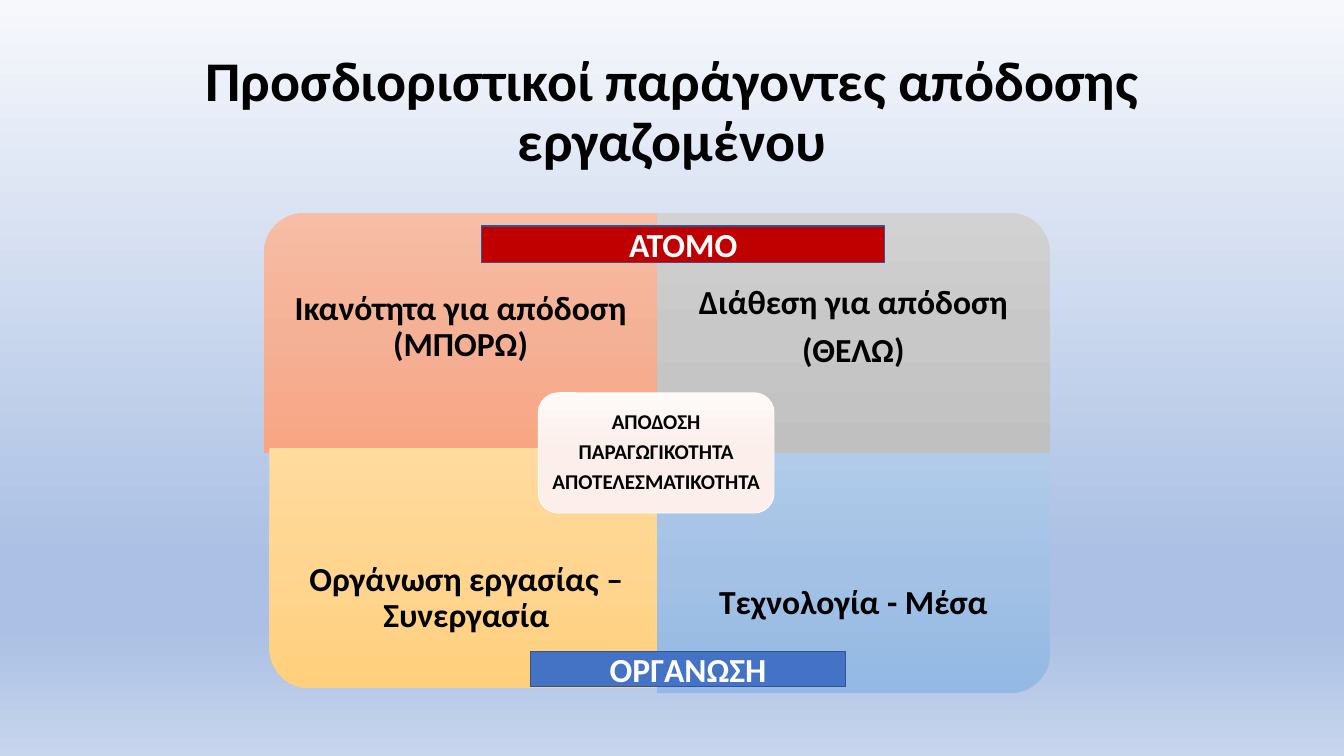
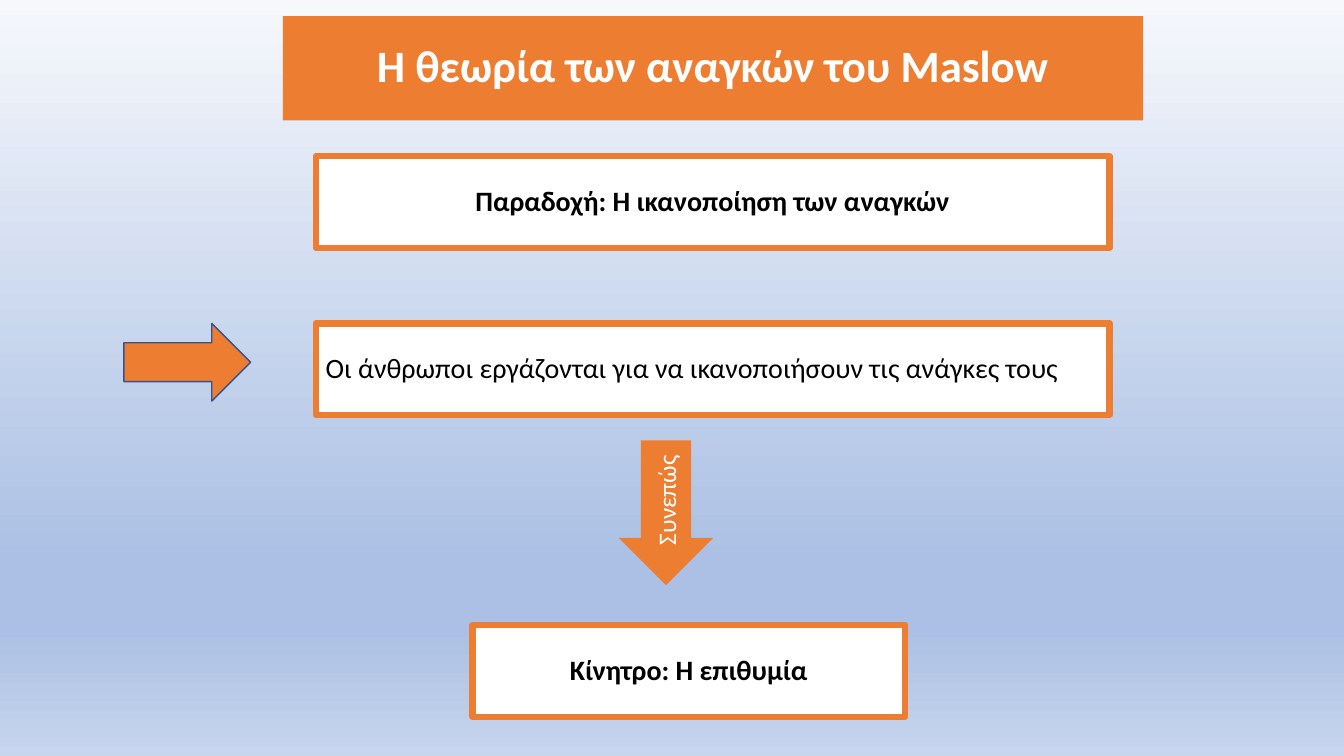
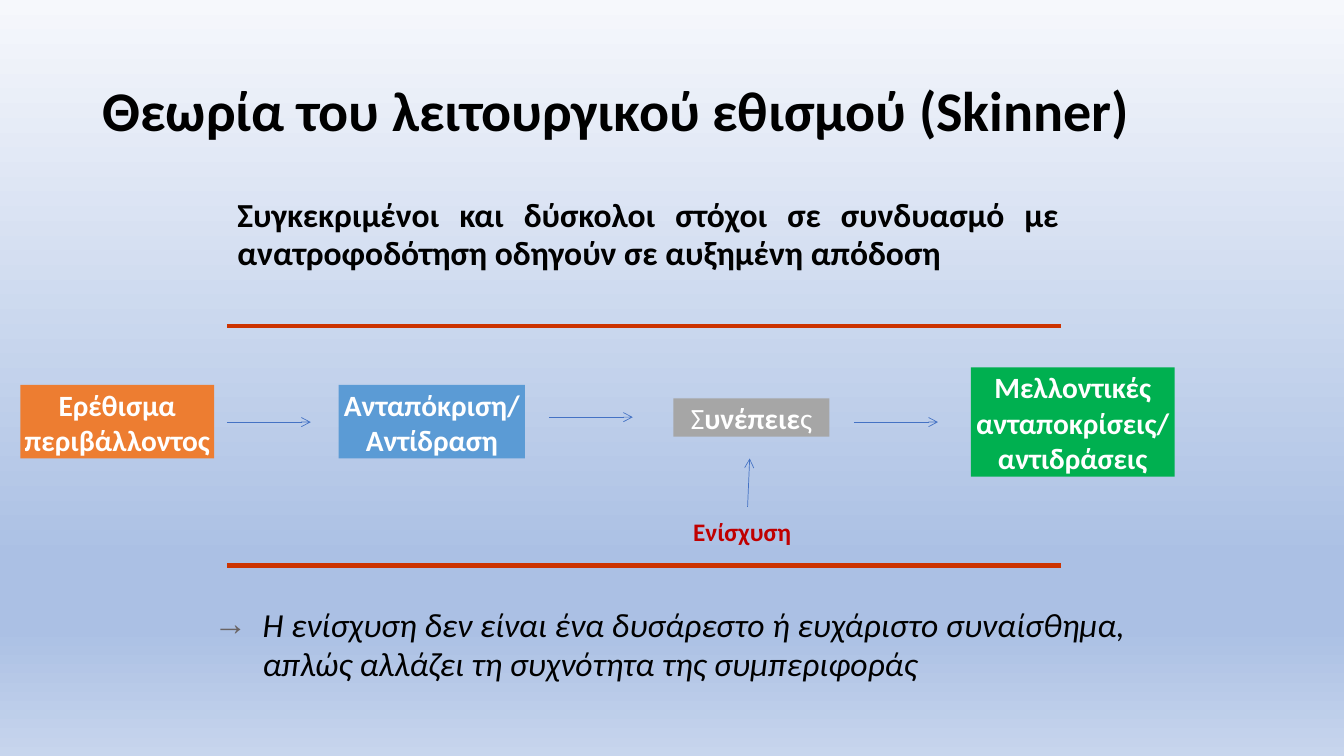
from lxml import etree
from pptx import Presentation
from pptx import util as u
from pptx.dml import color
from pptx.enum import shapes, text
from pptx.oxml import ns

COLORS = {
    "ink": "000000", "white": "FFFFFF", "orange": "ED7D31", "red": "C00000",
    "blue": "4472C4", "outline": "325491", "sky": "5B9BD5", "gray": "A6A6A6",
    "green": "00B050", "rule": "CC3300", "bullet": "696363",
}
GRADIENTS = {
    "background": [(0, "F6F8FC"), (74, "ABC0E4"), (83, "ABC0E4"), (100, "C7D5ED")],
    "ability": [(0, "F7BDA5"), (50, "F5B196"), (100, "F8A582")],
    "will": [(0, "D2D2D2"), (50, "C8C8C8"), (100, "C0C0C0")],
    "organisation": [(0, "FFDB9E"), (50, "FFD590"), (100, "FFD07C")],
    "technology": [(0, "B1CBE9"), (50, "A3C1E5"), (100, "93B9E4")],
    "result": [(0, "FEFAF8"), (50, "FCEEEA"), (100, "FDECE7")],
}
SHAPE = shapes.MSO_SHAPE
ALIGN = text.PP_ALIGN
ANCHOR = text.MSO_ANCHOR
TITLE_AREA = (66, 29, 828, 104)


def rgb(name):
    """Return the named palette colour."""
    return color.RGBColor.from_string(COLORS[name])


def assign(target, values):
    """Set each attribute of the target from a dict."""
    for key, value in values.items():
        setattr(target, key, value)


def add_xml(parent, tag, **attributes):
    """Append a drawing element to the parent."""
    return etree.SubElement(parent, ns.qn(tag), attributes)


def fill_gradient(fill, owner, name):
    """Fill from top to bottom with a named gradient."""
    fill.gradient()
    fill.gradient_angle = 270
    gradient = next(owner.iter(ns.qn("a:gradFill")))
    gradient.set("rotWithShape", "0")
    stops = gradient.find(ns.qn("a:gsLst"))
    for stop in list(stops):
        stops.remove(stop)
    for position, value in GRADIENTS[name]:
        add_xml(add_xml(stops, "a:gs", pos=str(position * 1000)), "a:srgbClr", val=value)


class Deck:
    """Hold the presentation style and the current slide."""

    def __init__(self):
        """Set the slide size and the shared background."""
        self.prs = Presentation()
        assign(self.prs, {"slide_width": u.Pt(960), "slide_height": u.Pt(540)})
        master = self.prs.slide_master
        fill_gradient(master.background.fill, master.element, "background")
        self.slide = None

    def place(self, shape, area):
        """Move a shape to an area given in points."""
        assign(shape, dict(zip(("left", "top", "width", "height"), map(u.Pt, area))))

    def set_text(self, shape, paragraphs, size, ink="ink", bold=True, italic=False,
                 anchor=ANCHOR.MIDDLE, insets=(7.2, 3.6, 7.2, 3.6), **spacing):
        """Set paragraphs, each a string or a list of (text, bold) runs."""
        frame = shape.text_frame
        sides = ("margin_left", "margin_top", "margin_right", "margin_bottom")
        assign(frame, {"word_wrap": True, "auto_size": text.MSO_AUTO_SIZE.NONE,
                       "vertical_anchor": anchor, **dict(zip(sides, map(u.Pt, insets)))})
        layout = {"alignment": ALIGN.CENTER, "space_before": u.Pt(0), **spacing}
        for index, content in enumerate(paragraphs):
            paragraph = frame.add_paragraph() if index else frame.paragraphs[0]
            assign(paragraph, layout)
            runs = [(content, bold)] if isinstance(content, str) else content
            for words, weight in runs:
                run = paragraph.add_run()
                run.text = words
                assign(run.font, {"name": "Calibri", "size": u.Pt(size),
                                  "bold": weight, "italic": italic})
                run.font.color.rgb = rgb(ink)

    def start(self, title, area=TITLE_AREA, layout=5, fill=None, **style):
        """Add a slide with its title."""
        self.slide = self.prs.slides.add_slide(self.prs.slide_layouts[layout])
        heading = self.slide.shapes.title
        self.place(heading, area)
        if fill:
            heading.fill.solid()
            heading.fill.fore_color.rgb = rgb(fill)
        self.set_text(heading, [title], **{"size": 40, "line_spacing": 0.9, **style})

    def shape(self, kind, area, fill, line=None, weight=1):
        """Add a preset shape with a plain or gradient fill."""
        shape = self.slide.shapes.add_shape(kind, *map(u.Pt, area))
        shape.shadow.inherit = False
        if fill in GRADIENTS:
            fill_gradient(shape.fill, shape.element.spPr, fill)
        else:
            shape.fill.solid()
            shape.fill.fore_color.rgb = rgb(fill)
        if line:
            shape.line.color.rgb = rgb(line)
            shape.line.width = u.Pt(weight)
        else:
            shape.line.fill.background()
        return shape

    def quadrant(self, area, turns, fill):
        """Add a quadrant whose round corner is set by quarter turns."""
        left, top, width, height = area
        if turns % 2:
            shift = (width - height) / 2
            area = (left + shift, top - shift, height, width)
        self.shape(SHAPE.ROUND_1_RECTANGLE, area, fill).rotation = turns * 90

    def label(self, area, paragraphs, size, **style):
        """Add a text box."""
        box = self.slide.shapes.add_textbox(*map(u.Pt, area))
        self.set_text(box, paragraphs, size, **style)

    def line(self, begin, end, ink, weight, arrow=False):
        """Add a straight line or arrow."""
        link = self.slide.shapes.add_connector(
            shapes.MSO_CONNECTOR.STRAIGHT, *map(u.Pt, begin + end))
        link.line.color.rgb = rgb(ink)
        link.line.width = u.Pt(weight)
        properties = link.element.spPr
        if arrow:
            add_xml(properties.find(ns.qn("a:ln")), "a:tailEnd", type="arrow")
        add_xml(properties, "a:effectLst")

    def bullets(self, area, items, mark, indent, **style):
        """Fill the body placeholder with a marked list."""
        body = self.slide.placeholders[1]
        self.place(body, area)
        self.set_text(body, items, **style)
        for paragraph in body.text_frame.paragraphs:
            properties = paragraph._p.get_or_add_pPr()
            properties.set("marL", str(u.Pt(indent)))
            properties.set("indent", str(-u.Pt(indent)))
            add_xml(add_xml(properties, "a:buClr"), "a:srgbClr", val=COLORS["bullet"])
            add_xml(properties, "a:buFont", typeface="Arial")
            add_xml(properties, "a:buChar", char=mark)


def performance_factors(deck):
    """Build the matrix of performance factors."""
    deck.start("Προσδιοριστικοί παράγοντες απόδοσης εργαζομένου")
    width, height, text_height = 281, 171.5, 128
    lower = height - text_height
    quadrants = [
        (188.5, 152, 3, "ability", 0, 36, ["Ικανότητα για απόδοση (ΜΠΟΡΩ)"]),
        (469, 152, 0, "will", 0, 36, ["Διάθεση για απόδοση", "(ΘΕΛΩ)"]),
        (192.5, 320, 2, "organisation", lower, 0, ["Οργάνωση εργασίας – Συνεργασία"]),
        (469, 323.5, 1, "technology", lower, 0, ["Τεχνολογία - Μέσα"]),
    ]
    for left, top, turns, fill, drop, extra, factor in quadrants:
        deck.quadrant((left, top, width, height), turns, fill)
        deck.label((left, top + drop, width, text_height), factor, 24,
                   insets=(13.5, 13.5 + extra, 13.5, 13.5),
                   line_spacing=0.9, space_after=u.Pt(8.4))
    result = deck.shape(SHAPE.ROUNDED_RECTANGLE, (384.5, 280.5, 168.5, 86),
                        "result", "white", 0.5)
    deck.set_text(result, ["ΑΠΟΔΟΣΗ", "ΠΑΡΑΓΩΓΙΚΟΤΗΤΑ", "ΑΠΟΤΕΛΕΣΜΑΤΙΚΟΤΗΤΑ"], 15,
                  insets=(4, 4, 4, 4), line_spacing=0.9, space_after=u.Pt(5.25))
    for area, fill, level in [((344, 161.5, 288, 26), "red", "ΑΤΟΜΟ"),
                              ((379, 465.5, 225, 25), "blue", "ΟΡΓΑΝΩΣΗ")]:
        banner = deck.shape(SHAPE.RECTANGLE, area, fill, "outline")
        deck.set_text(banner, [level], 24, "white")


def needs_theory(deck):
    """Build the flow from needs to motive."""
    deck.start("Η θεωρία των αναγκών του Maslow", (202, 11.5, 614.5, 74.5),
               fill="orange", size=32, ink="white")
    steps = [
        (225.5, 111.5, 567, "Παραδοχή: Η ικανοποίηση των αναγκών", True, ALIGN.CENTER),
        (225.5, 231, 567, "Οι άνθρωποι εργάζονται για να ικανοποιήσουν τις ανάγκες τους",
         False, ALIGN.LEFT),
        (337.5, 446.5, 309, "Κίνητρο: Η επιθυμία", True, ALIGN.CENTER),
    ]
    for left, top, width, step, bold, alignment in steps:
        box = deck.shape(SHAPE.RECTANGLE, (left, top, width, 65.5), "white", "orange", 4.5)
        deck.set_text(box, [step], 20, bold=bold, alignment=alignment, line_spacing=0.9)
    deck.shape(SHAPE.RIGHT_ARROW, (88.5, 231, 90.5, 55.5), "orange", "outline")
    therefore = deck.shape(SHAPE.DOWN_ARROW, (442, 314.5, 67.5, 103.5), "orange")
    therefore.adjustments[0] = 0.53
    therefore.adjustments[1] = 0.5
    deck.set_text(therefore, ["Συνεπώς"], 18, "white", bold=False)
    therefore.text_frame._txBody.bodyPr.set("vert", "vert270")


def conditioning_theory(deck):
    """Build the chain of operant conditioning."""
    deck.start("Θεωρία του λειτουργικού εθισμού (Skinner)", layout=1, alignment=ALIGN.LEFT)
    deck.bullets((152.5, 432, 670, 60),
                 ["Η ενίσχυση δεν είναι ένα δυσάρεστο ή ευχάριστο συναίσθημα, "
                  "απλώς αλλάζει τη συχνότητα της συμπεριφοράς"],
                 "→", 35, size=24, bold=False, italic=True, anchor=ANCHOR.TOP,
                 insets=(0, 0, 0, 0), alignment=ALIGN.LEFT, line_spacing=u.Pt(28))
    deck.label((162.5, 137, 601, 62),
               ["Συγκεκριμένοι και δύσκολοι στόχοι σε συνδυασμό με "
                "ανατροφοδότηση οδηγούν σε αυξημένη απόδοση"], 24,
               anchor=ANCHOR.TOP, alignment=ALIGN.JUSTIFY,
               line_spacing=u.Pt(26.9), space_before=u.Pt(3.5))
    for height in (233, 404):
        deck.line((162.5, height), (758, height), "rule", 3)
    stages = [
        ((14.5, 275, 138.5, 52.5), "orange", "Ερέθισμα περιβάλλοντος"),
        ((242, 275, 133, 52.5), "sky", "Ανταπόκριση/ Αντίδραση"),
        ((481, 284.5, 111.5, 27.5), "gray",
         [("Σ", False), ("υνέπειε", True), ("ς", False)]),
        ((693.5, 262.5, 145.5, 78), "green", "Μελλοντικές ανταποκρίσεις/ αντιδράσεις"),
    ]
    for area, fill, stage in stages:
        box = deck.shape(SHAPE.RECTANGLE, area, fill)
        deck.set_text(box, [stage], 21, "white", anchor=ANCHOR.TOP,
                      insets=(0, 1.5, 0, 0), space_before=u.Pt(1.1))
    deck.label((488, 365, 90, 29), ["Ενίσχυση"], 18, ink="red", anchor=ANCHOR.TOP,
               alignment=ALIGN.LEFT, space_before=u.Pt(1.1))
    for begin, end in [((162, 301.5), (222, 301.5)), ((392, 298), (452, 298)),
                       ((610, 301.5), (670, 301.5)), ((534, 362), (535.5, 327.5))]:
        deck.line(begin, end, "blue", 0.5, arrow=True)


def main():
    """Build and save the presentation."""
    deck = Deck()
    for build in (performance_factors, needs_theory, conditioning_theory):
        build(deck)
    deck.prs.save("out.pptx")


if __name__ == "__main__":
    main()
